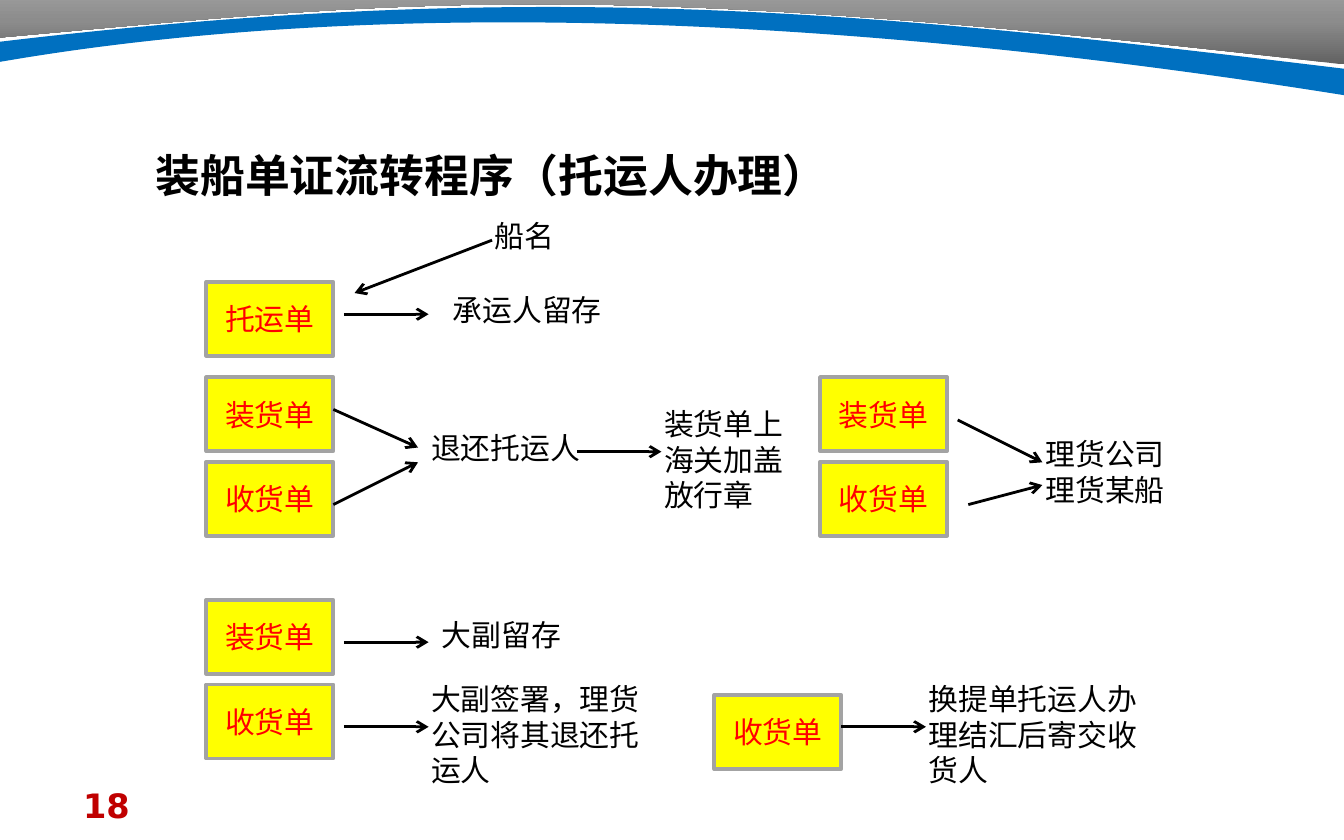
from lxml import etree
from copy import deepcopy

from pptx import Presentation
from pptx.dml.color import RGBColor
from pptx.enum.shapes import MSO_CONNECTOR, MSO_SHAPE
from pptx.enum.text import MSO_ANCHOR, MSO_AUTO_SIZE, PP_ALIGN
from pptx.oxml import parse_xml
from pptx.oxml.ns import nsdecls, qn
from pptx.util import Cm, Pt

RECTANGLE = MSO_SHAPE.RECTANGLE
STRAIGHT = MSO_CONNECTOR.STRAIGHT
MIDDLE = MSO_ANCHOR.MIDDLE
CENTER = PP_ALIGN.CENTER
GROW = MSO_AUTO_SIZE.SHAPE_TO_FIT_TEXT

BLACK = RGBColor(0x00, 0x00, 0x00)
RED = RGBColor(0xFF, 0x00, 0x00)
DARK_RED = RGBColor(0xC0, 0x00, 0x00)
YELLOW = RGBColor(0xFF, 0xFF, 0x00)
BORDER_GREY = RGBColor(0xA3, 0xA3, 0xA3)
BLUE = RGBColor(0x00, 0x70, 0xC0)
BAND_GREYS = [(0, RGBColor(0x62, 0x62, 0x62)),
              (0.5, RGBColor(0x8C, 0x8C, 0x8C)),
              (1, RGBColor(0xA6, 0xA6, 0xA6))]

CHINESE = "Noto Sans CJK SC"
BODY = {"name": CHINESE, "size": Pt(16), "color": BLACK}
FORM = {**BODY, "color": RED}
TITLE = {**BODY, "size": Pt(24), "bold": True}
NUMBER = {"name": "DejaVu Sans", "size": Pt(18), "color": DARK_RED, "bold": True}

PAGE_WIDTH, PAGE_HEIGHT = 25.4, 15.88
FORM_WIDTH, FORM_HEIGHT = 2.4, 1.4

# Header bands: a start, then lines (one point) and curves (three points), in cm
GREY_BAND = [
    [(PAGE_WIDTH, 1.22)],
    [(11.25, -0.43), (7.82, 0), (0, 0.71)],
    [(0, -0.05)],
    [(PAGE_WIDTH, -0.05)],
]
BLUE_BAND = [
    [(0, 0.79)],
    [(10.24, -0.43), (16.56, 0.23), (PAGE_WIDTH, 1.3)],
    [(PAGE_WIDTH, 1.8)],
    [(15.37, 0.2), (6.78, 0), (0, 1.17)],
]

# Forms: text, left, top (cm)
FORMS = [
    ("托运单", 3.9, 5.33),
    ("装货单", 3.9, 7.13), ("收货单", 3.9, 8.73),
    ("装货单", 3.9, 11.34), ("收货单", 3.9, 12.94),
    ("装货单", 15.5, 7.13), ("收货单", 15.5, 8.73),
    ("收货单", 13.5, 13.14),
]

# Texts: text, left, top, width, height (cm), format
TEXTS = [
    ("装船单证流转程序（托运人办理）", 2.69, 2.66, 14, 1.27, TITLE),
    ("船名", 9.1, 3.99, 3.81, 0.94, BODY),
    ("承运人留存", 8.31, 5.39, 3.81, 0.94, BODY),
    ("退还托运人", 7.9, 8, 3.81, 0.94, BODY),
    ("装货单上海关加盖放行章", 12.3, 7.54, 3.2, 2.31, BODY),
    ("理货公司\n理货某船", 19.51, 8.11, 3.2, 1.63, BODY),
    ("大副留存", 8.1, 11.53, 3.81, 0.94, BODY),
    ("大副签署，理货公司将其退还托运人", 7.9, 12.74, 4.6, 2.31, BODY),
    ("换提单托运人办理结汇后寄交收货人", 17.3, 12.74, 4.6, 2.31, BODY),
]

# Arrows: start x, start y, end x, end y (cm)
ARROWS = [
    (9.3, 4.54, 6.7, 5.54), (6.5, 5.94, 8.1, 5.94),
    (6.3, 7.74, 7.9, 8.46), (6.3, 9.54, 7.9, 8.74),
    (10.9, 8.54, 12.5, 8.54),
    (18.1, 7.94, 19.7, 8.74), (18.3, 9.54, 19.7, 9.17),
    (6.5, 12.14, 8.1, 12.14), (6.5, 13.74, 8.1, 13.74),
    (15.9, 13.74, 17.5, 13.74),
]


def add_band(page, segments):
    """Draw a closed outline, turning each three-point segment into a curve."""
    start, *others = [(Cm(x), Cm(y)) for segment in segments for x, y in segment]
    builder = page.shapes.build_freeform(*start)
    builder.add_line_segments(others, close=True)
    band = builder.convert_to_shape()
    lines = iter(list(band._element.iter(qn("a:lnTo"))))
    for segment in segments[1:]:
        steps = [next(lines) for _ in segment]
        if len(steps) == 3:
            bend = etree.Element(qn("a:cubicBezTo"))
            steps[0].addprevious(bend)
            for step in steps:
                bend.append(step[0])
                step.getparent().remove(step)
    band.shadow.inherit = False
    band.line.fill.background()
    return band


def add_header(page):
    grey = add_band(page, GREY_BAND)
    grey.fill.gradient()
    grey.fill.gradient_angle = 90
    stop_list = grey._element.spPr.find(qn("a:gradFill")).find(qn("a:gsLst"))
    stop_list.append(deepcopy(stop_list[-1]))
    for stop, (position, color) in zip(grey.fill.gradient_stops, BAND_GREYS):
        stop.position = position
        stop.color.rgb = color
    effects = grey._element.spPr.find(qn("a:effectLst"))
    effects.append(parse_xml(
        f'<a:outerShdw {nsdecls("a")} blurRad="0" dist="25400" dir="5400000" '
        'algn="t" rotWithShape="0"><a:srgbClr val="FFFFFF"/></a:outerShdw>'))

    blue = add_band(page, BLUE_BAND)
    blue.fill.solid()
    blue.fill.fore_color.rgb = BLUE


def write(frame, text, style, alignment=None):
    frame.word_wrap = True
    frame.text = text
    for para in frame.paragraphs:
        para.alignment = alignment
        for span in para.runs:
            for key, value in style.items():
                if key == "color":
                    span.font.color.rgb = value
                else:
                    setattr(span.font, key, value)
            east_asian = etree.SubElement(span.font._element, qn("a:ea"))
            east_asian.set("typeface", style["name"])


def add_text(page, text, left, top, width, height, style):
    box = page.shapes.add_textbox(Cm(left), Cm(top), Cm(width), Cm(height))
    write(box.text_frame, text, style)
    return box


def add_form(page, text, left, top):
    form = page.shapes.add_shape(RECTANGLE, Cm(left), Cm(top), Cm(FORM_WIDTH), Cm(FORM_HEIGHT))
    form.shadow.inherit = False
    form.fill.solid()
    form.fill.fore_color.rgb = YELLOW
    form.line.color.rgb = BORDER_GREY
    form.line.width = Pt(2)
    form.text_frame.vertical_anchor = MIDDLE
    write(form.text_frame, text, FORM, CENTER)


def add_arrow(page, *ends):
    arrow = page.shapes.add_connector(STRAIGHT, *map(Cm, ends))
    arrow.line.color.rgb = BLACK
    arrow.line.width = Pt(1.5)
    head = etree.SubElement(arrow.line._get_or_add_ln(), qn("a:tailEnd"))
    head.set("type", "arrow")
    etree.SubElement(arrow._element.spPr, qn("a:effectLst"))


def main():
    deck = Presentation()
    deck.slide_width, deck.slide_height = Cm(PAGE_WIDTH), Cm(PAGE_HEIGHT)
    page = deck.slides.add_slide(deck.slide_layouts[6])
    add_text(page, "18", 1.32, 14.71, 5.92, 0.84, NUMBER)
    add_header(page)
    for form in FORMS:
        add_form(page, *form)
    for text in TEXTS:
        add_text(page, *text).text_frame.auto_size = GROW
    for arrow in ARROWS:
        add_arrow(page, *arrow)
    deck.save("out.pptx")


if __name__ == "__main__":
    main()
